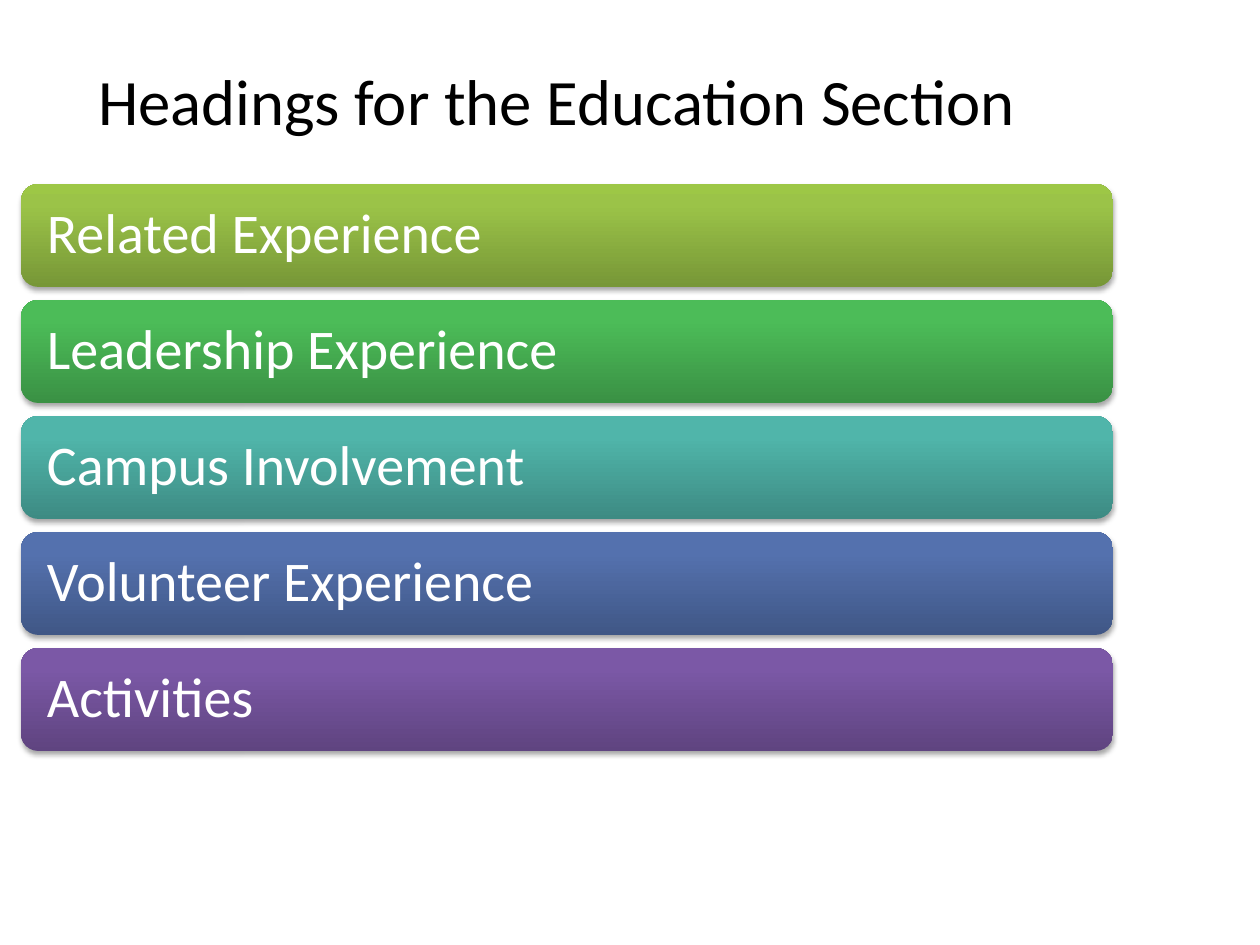
import copy

import pptx
import pptx.dml.color
import pptx.enum.shapes
import pptx.enum.text
import pptx.oxml
import pptx.oxml.ns
import pptx.util

EMU_PER_PX = 914400 / 126
COLORS = {"title": "000000", "label": "FFFFFF", "shadow": "000000"}
STOP_POSITIONS = (0, 0.8, 1)
HEADINGS = {
    "Related Experience": ("779737", "9BC348", "9DC746"),
    "Leadership Experience": ("3A9144", "4CBC58", "4ABF57"),
    "Campus Involvement": ("3D8B83", "50B5AA", "4EB8AC"),
    "Volunteer Experience": ("405786", "5471AE", "5271B0"),
    "Activities": ("5F4480", "7B58A6", "7C57A8"),
}
BAR_LEFT, BAR_TOP, BAR_WIDTH, BAR_HEIGHT, BAR_PITCH = 21, 184, 1092, 103, 116


def px(length):
    return pptx.util.Emu(round(length * EMU_PER_PX))


def rgb(value):
    return pptx.dml.color.RGBColor.from_string(value)


class SlideBuilder:
    font = "Calibri"
    title_size = 37
    label_size = 32

    def __init__(self, slide):
        self.slide = slide

    def set_text(self, shape, text, size, color, alignment, inset):
        frame = shape.text_frame
        frame.text = text
        frame.word_wrap = True
        frame.vertical_anchor = pptx.enum.text.MSO_ANCHOR.MIDDLE
        frame.margin_left = frame.margin_right = px(inset)
        para = frame.paragraphs[0]
        para.alignment = alignment
        span = para.runs[0]
        span.font.name = self.font
        span.font.size = pptx.util.Pt(size)
        span.font.color.rgb = rgb(COLORS[color])
        return para

    def title(self, text, left, top, width, height):
        box = self.slide.shapes.add_textbox(px(left), px(top), px(width), px(height))
        self.set_text(box, text, self.title_size, "title",
                      pptx.enum.text.PP_ALIGN.CENTER, 13)

    def bar(self, text, colors, left, top, width, height):
        shape = self.slide.shapes.add_shape(
            pptx.enum.shapes.MSO_SHAPE.ROUNDED_RECTANGLE,
            px(left), px(top), px(width), px(height))
        shape.line.fill.background()
        self.shade(shape, colors)
        self.drop_shadow(shape)
        para = self.set_text(shape, text, self.label_size, "label",
                             pptx.enum.text.PP_ALIGN.LEFT, 21)
        para.line_spacing = 0.9

    def shade(self, shape, colors):
        """Fill with a three-stop gradient running from bottom to top."""
        shape.fill.gradient()
        shape.fill.gradient_angle = 90
        stop_list = shape.element.spPr.find(".//" + pptx.oxml.ns.qn("a:gsLst"))
        stop_list.append(copy.deepcopy(stop_list[-1]))
        for stop, position, color in zip(shape.fill.gradient_stops,
                                         STOP_POSITIONS, colors):
            stop.position = position
            stop.color.rgb = rgb(color)

    def drop_shadow(self, shape):
        shape.shadow.inherit = False
        effects = shape.element.spPr.find(pptx.oxml.ns.qn("a:effectLst"))
        effects.append(pptx.oxml.parse_xml(
            f'<a:outerShdw {pptx.oxml.ns.nsdecls("a")} blurRad="40000" '
            'dist="23000" dir="5400000" rotWithShape="0">'
            f'<a:srgbClr val="{COLORS["shadow"]}"><a:alpha val="35000"/>'
            '</a:srgbClr></a:outerShdw>'))


def main():
    deck = pptx.Presentation()
    deck.slide_width, deck.slide_height = px(1260), px(945)
    page = SlideBuilder(deck.slides.add_slide(deck.slide_layouts[6]))
    page.title("Headings for the Education Section", 21, 21, 1071, 158)
    for row, (heading, colors) in enumerate(HEADINGS.items()):
        page.bar(heading, colors, BAR_LEFT, BAR_TOP + row * BAR_PITCH,
                 BAR_WIDTH, BAR_HEIGHT)
    deck.save("out.pptx")


if __name__ == "__main__":
    main()
